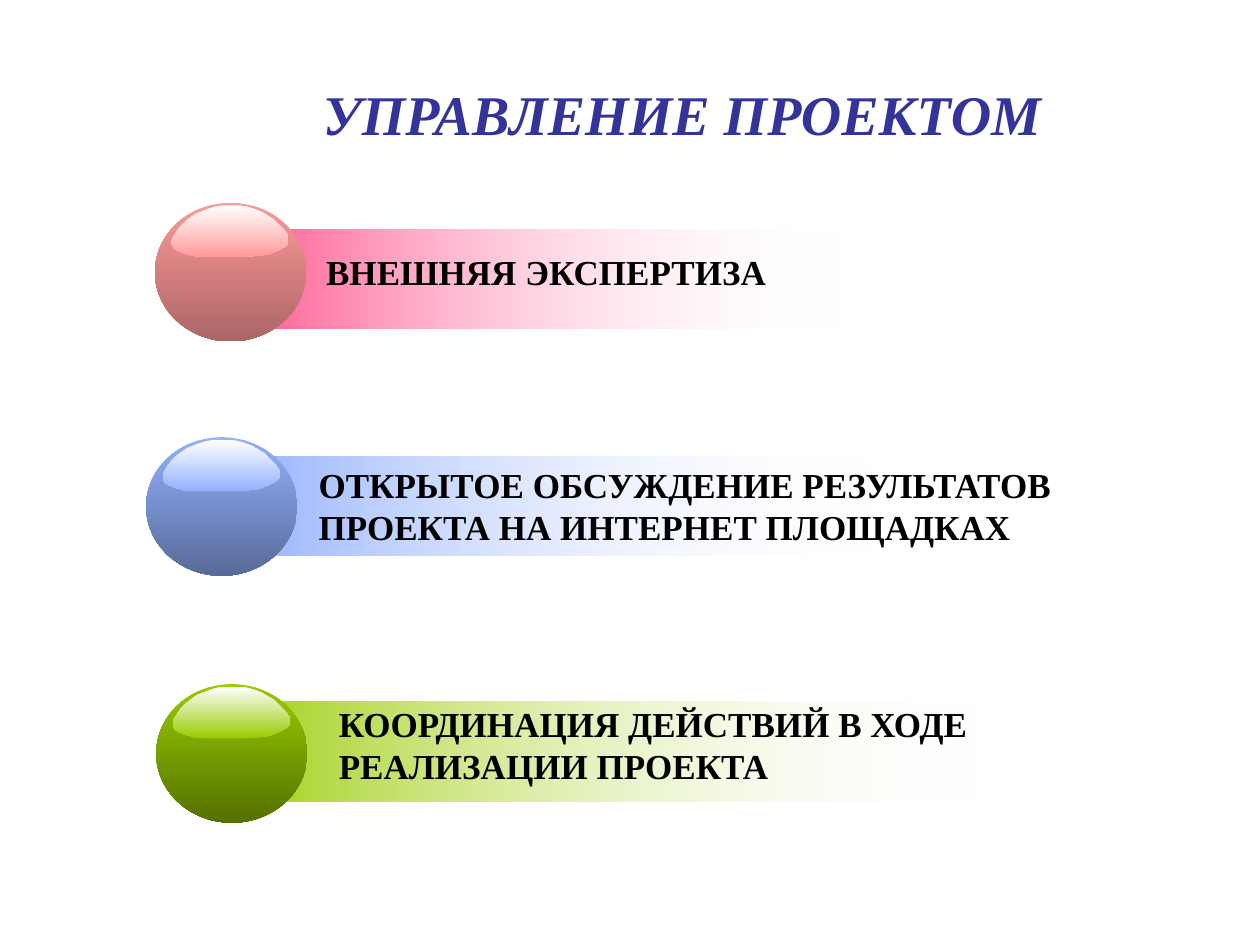
from dataclasses import dataclass

from lxml import etree
from pptx import Presentation, util as u
from pptx.dml.color import RGBColor
from pptx.enum import shapes, text
from pptx.oxml.ns import qn


@dataclass(frozen=True)
class Theme:
    font: str = "Times New Roman"
    title_size: int = 32
    body_size: int = 20
    title: str = "333399"
    body: str = "000000"
    white: str = "FFFFFF"
    pink: str = "FF6699"
    rose: str = "FF9999"
    blue: str = "93B1FD"
    green: str = "99CC00"


THEME = Theme()
CAP = [
    (92, 23), (93, 25), (93, 30), (90, 33), (84, 36), (77, 39), (68, 40),
    (56, 41), (34, 41), (25, 41), (17, 40), (10, 38), (5, 36), (2, 34),
    (0, 30), (1, 26), (4, 21), (7, 17), (11, 13), (15, 10), (19, 7),
    (24, 5), (29, 3), (35, 1), (41, 0), (47, 0), (54, 0), (60, 1), (66, 3),
    (71, 5), (76, 8), (81, 11), (85, 15), (89, 19),
]


def write(tf, content, size=THEME.body_size, color=THEME.body, italic=False, align=None):
    p = tf.paragraphs[0]
    p.alignment = align
    r = p.add_run()
    r.text = content
    r.font.name = THEME.font
    r.font.size = u.Pt(size)
    r.font.bold = True
    r.font.italic = italic
    r.font.color.rgb = RGBColor.from_string(color)


class Deck:
    def __init__(self, theme):
        self.theme = theme
        self.prs = Presentation()
        self.prs.slide_width, self.prs.slide_height = u.Inches(10), u.Inches(7.5)
        self.s = self.prs.slides.add_slide(self.prs.slide_layouts[6])

    def gradient(self, sp, start, end, angle, start_alpha=None, end_shade=None):
        sp.shadow.inherit = False
        sp.line.fill.background()
        sp.fill.gradient()
        sp.fill.gradient_angle = angle
        effects = (("a:alpha", start_alpha), ("a:shade", end_shade))
        stops = zip(sp.fill.gradient_stops, (start, end), (0, 1), effects)
        for stop, color, position, (tag, percent) in stops:
            stop.color.rgb = RGBColor.from_string(color)
            stop.position = position
            if percent is not None:
                clr = sp.fill._xPr.findall(".//" + qn("a:srgbClr"))[position]
                etree.SubElement(clr, qn(tag)).set("val", str(round(percent * 1000)))

    def bar(self, x, y, w, color):
        sp = self.s.shapes.add_shape(
            shapes.MSO_SHAPE.RECTANGLE, u.Inches(x), u.Inches(y), u.Inches(w), u.Inches(0.79))
        sp.rotation = 180
        self.gradient(sp, self.theme.white, color, 0, start_alpha=0)

    def ball(self, x, y, color, shade):
        group = self.s.shapes.add_group_shape()
        sp = group.shapes.add_shape(
            shapes.MSO_SHAPE.OVAL, u.Inches(x), u.Inches(y), u.Inches(1.2), u.Inches(1.1))
        self.gradient(sp, color, color, 270, end_shade=shade)
        fb = group.shapes.build_freeform(*CAP[0], scale=u.Inches(0.01))
        fb.add_line_segments(CAP[1:], close=True)
        cap = fb.convert_to_shape(u.Inches(x + 0.13), u.Inches(y + 0.02))
        self.gradient(cap, self.theme.white, color, 270)

    def label(self, x, y, w, h, content, anchor=text.MSO_ANCHOR.TOP, grow=True, **fmt):
        tf = self.s.shapes.add_textbox(
            u.Inches(x), u.Inches(y), u.Inches(w), u.Inches(h)).text_frame
        tf.word_wrap = True
        tf.vertical_anchor = anchor
        if grow:
            tf.auto_size = text.MSO_AUTO_SIZE.SHAPE_TO_FIT_TEXT
        write(tf, content, **fmt)


def main():
    t = THEME
    deck = Deck(t)
    rows = [
        ((2.08, 1.82, 4.62, t.pink), (1.23, 1.61, t.rose, 40),
         (2.49, 1.94, 4.64, 0.44, "ВНЕШНЯЯ ЭКСПЕРТИЗА")),
        ((1.84, 3.62, 5.1, t.blue), (1.16, 3.47, t.blue, 31.4),
         (2.43, 3.63, 6.98, 0.77,
          "ОТКРЫТОЕ ОБСУЖДЕНИЕ РЕЗУЛЬТАТОВ ПРОЕКТА НА ИНТЕРНЕТ ПЛОЩАДКАХ")),
        ((1.6, 5.57, 6.22, t.green), (1.24, 5.43, t.green, 26),
         (2.59, 5.53, 5.41, 0.77, "КООРДИНАЦИЯ ДЕЙСТВИЙ В ХОДЕ РЕАЛИЗАЦИИ ПРОЕКТА")),
    ]
    for bar, ball, label in rows:
        deck.bar(*bar)
        deck.ball(*ball)
        deck.label(*label)
    deck.label(1.91, 0.09, 7.01, 1.61, "УПРАВЛЕНИЕ ПРОЕКТОМ",
               anchor=text.MSO_ANCHOR.MIDDLE, grow=False, size=t.title_size,
               color=t.title, italic=True, align=text.PP_ALIGN.CENTER)
    deck.prs.save("out.pptx")


if __name__ == "__main__":
    main()
